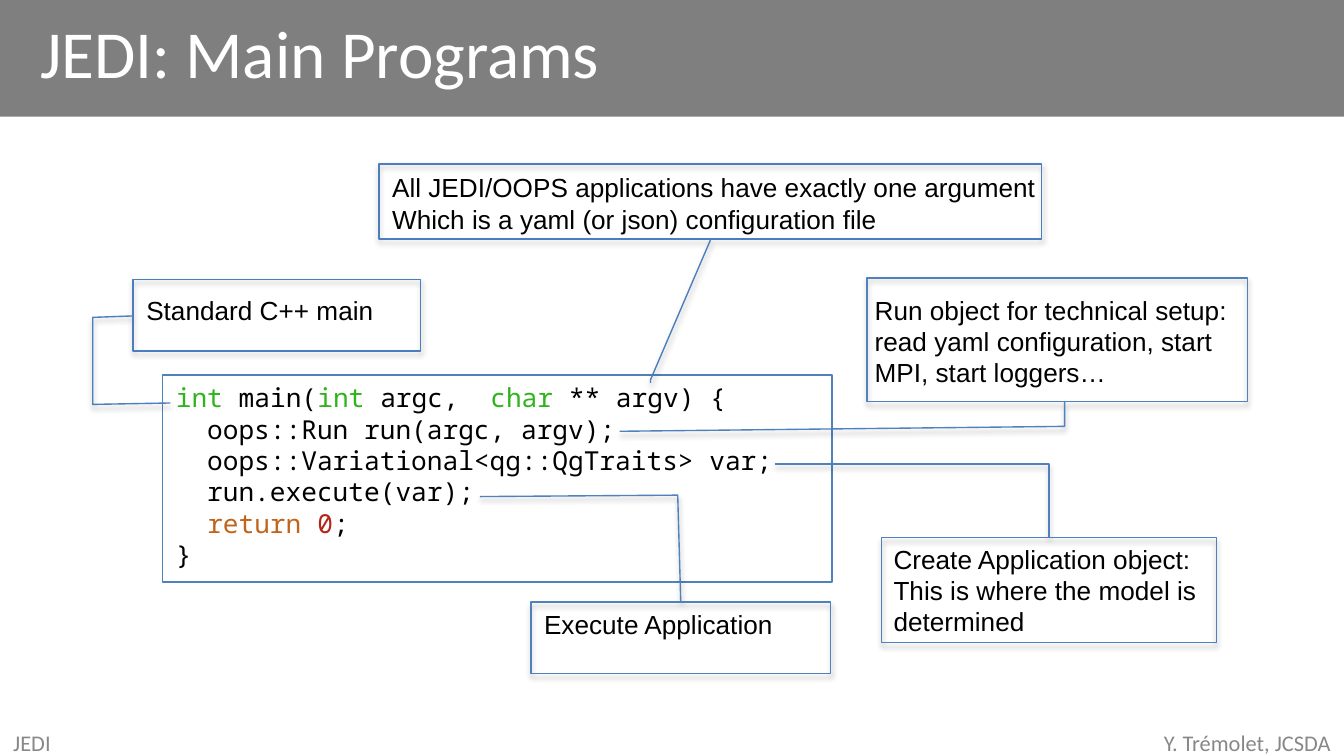
import pptx
import pptx.util
import pptx.dml.color
import pptx.enum.shapes
import pptx.enum.text
import pptx.oxml
import pptx.oxml.ns
from lxml import etree

Pt = pptx.util.Pt
MSO = pptx.enum.shapes.MSO_SHAPE
ANCHOR = pptx.enum.text.MSO_ANCHOR
ALIGN = pptx.enum.text.PP_ALIGN
qn = pptx.oxml.ns.qn

COLORS = {
    "black": "000000", "white": "FFFFFF", "footer": "888888",
    "line": "4F81BD", "line_dark": "4B7EBC",
    "type": "2FB41D", "keyword": "C1651C", "number": "B42419",
}

CODE = [
    [("int", "type"), (" main(", "black"), ("int ", "type"), ("argc,  ", "black"),
     ("char", "type"), (" ** argv) {", "black")],
    [("  oops::Run run(argc, argv);", "black")],
    [("  oops::Variational<qg::QgTraits> var;", "black")],
    [("  run.execute(var);", "black")],
    [("  ", "black"), ("return ", "keyword"), ("0", "number"), (";", "black")],
    [("}", "black")],
]

CALLOUTS = [
    (MSO.LINE_CALLOUT_3, (71.3, 149.8, 154.1, 38.2), (0, 4.3, 154.1, 28.8),
     (0.51, 0, 0.53, -0.14, 1.75, -0.14, 1.73, 0.13), "line_dark",
     ["Standard C++ main"]),
    (MSO.LINE_CALLOUT_2, (464.4, 149, 203.8, 66.2), (-2.9, 5, 211, 60.5),
     (1, 0.52, 1.2, 0.52, 1.24, -0.65), "line",
     ["Run object for technical setup: read yaml configuration, start MPI, start loggers…"]),
    (MSO.LINE_CALLOUT_2, (472.3, 288, 179.3, 56.2), (-0.7, -0.7, 193.7, 58.3),
     (0, 0.5, -0.7, 0.5, -0.7, -0.32), "line",
     ["Create Application object:", "This is where the model is", "determined"]),
    (MSO.LINE_CALLOUT_2, (284.4, 322.6, 160.6, 38.2), (0, 0, 160.6, 28.8),
     (-0.01, 0.5, -1.5, 0.49, -1.48, -0.17), "line",
     ["Execute Application"]),
    (MSO.LINE_CALLOUT_3, (203, 87.8, 355, 40.3), (0, 0.7, 360, 41),
     (1.03, 0.5, 1.02, 0.5, 2.87, 0.41, 2.91, 0.41), "line_dark",
     ["All JEDI/OOPS applications have exactly one argument",
      "Which is a yaml (or json) configuration file"]),
]


def rgb(name):
    return pptx.dml.color.RGBColor.from_string(COLORS[name])


def set_font(font, name, size, color):
    font.name = name
    font.size = Pt(size)
    font.color.rgb = rgb(color)


def add_outline(shapes, kind, box, color):
    sp = shapes.add_shape(kind, *map(Pt, box))
    sp.shadow.inherit = False
    sp.fill.background()
    sp.line.color.rgb = rgb(color)
    sp.line.width = Pt(0.75)
    return sp


def add_text(shapes, box, lines, name, size, color, anchor=ANCHOR.TOP, align=ALIGN.LEFT):
    tf = shapes.add_textbox(*map(Pt, box)).text_frame
    tf.word_wrap = True
    tf.vertical_anchor = anchor
    tf.text = "\n".join(lines)
    for p in tf.paragraphs:
        p.alignment = align
        for r in p.runs:
            set_font(r.font, name, size, color)


def add_soft_shadow(sp):
    effects = sp._element.spPr.find(qn("a:effectLst"))
    shadow = etree.SubElement(effects, qn("a:outerShdw"), blurRad=str(Pt(3.1)),
                              dist=str(Pt(1.8)), dir="5400000", rotWithShape="0")
    clr = etree.SubElement(shadow, qn("a:srgbClr"), val=COLORS["black"])
    etree.SubElement(clr, qn("a:alpha"), val="35000")


def add_header(s, box):
    x, y, w, h = box
    sp = s.shapes.add_shape(MSO.RECTANGLE, *map(Pt, box))
    sp.shadow.inherit = False
    sp.fill.solid()
    sp.fill.fore_color.rgb = rgb("black")
    clr = sp._element.spPr.find(qn("a:solidFill")).find(qn("a:srgbClr"))
    etree.SubElement(clr, qn("a:alpha"), val="50000")
    sp.line.fill.background()
    add_text(s.shapes, (x + 14.4, y, 600, h - 7.2), ["JEDI: Main Programs"],
             "Calibri", 36, "white", ANCHOR.MIDDLE)


def add_footer(s, box):
    x, y, w, h = box
    add_text(s.shapes, (x, y, 168, h), ["JEDI"], "Calibri", 12, "footer", ANCHOR.MIDDLE)
    add_text(s.shapes, (x + w - 228, y, 228, h), ["Y. Trémolet, JCSDA"],
             "Calibri", 12, "footer", ANCHOR.MIDDLE, ALIGN.RIGHT)


def add_code(s, box):
    tf = add_outline(s.shapes, MSO.RECTANGLE, box, "line").text_frame
    tf.word_wrap = True
    tf.vertical_anchor = ANCHOR.TOP
    for i, line in enumerate(CODE):
        p = tf.add_paragraph() if i else tf.paragraphs[0]
        p.alignment = ALIGN.LEFT
        for text, color in line:
            r = p.add_run()
            r.text = text
            set_font(r.font, "Noto Sans Mono", 14, color)


def add_callout(s, kind, box, text_box, adjustments, color, lines):
    x, y, w, h = box
    dx, dy, tw, th = text_box
    group = s.shapes.add_group_shape()
    sp = add_outline(group.shapes, kind, box, color)
    for i, value in enumerate(adjustments):
        sp.adjustments[i] = value
    add_soft_shadow(sp)
    add_text(group.shapes, (x + dx, y + dy, tw, th), lines, "Arial", 14, "black")


def main():
    prs = pptx.Presentation()
    prs.slide_width, prs.slide_height = Pt(720), Pt(405)
    s = prs.slides.add_slide(prs.slide_layouts[6])
    add_header(s, (0, 0, 720, 62.6))
    add_footer(s, (0, 390.2, 720, 14.8))
    add_code(s, (87.1, 200.9, 358.6, 110.9))
    for callout in CALLOUTS:
        add_callout(s, *callout)
    prs.save("out.pptx")


if __name__ == "__main__":
    main()
